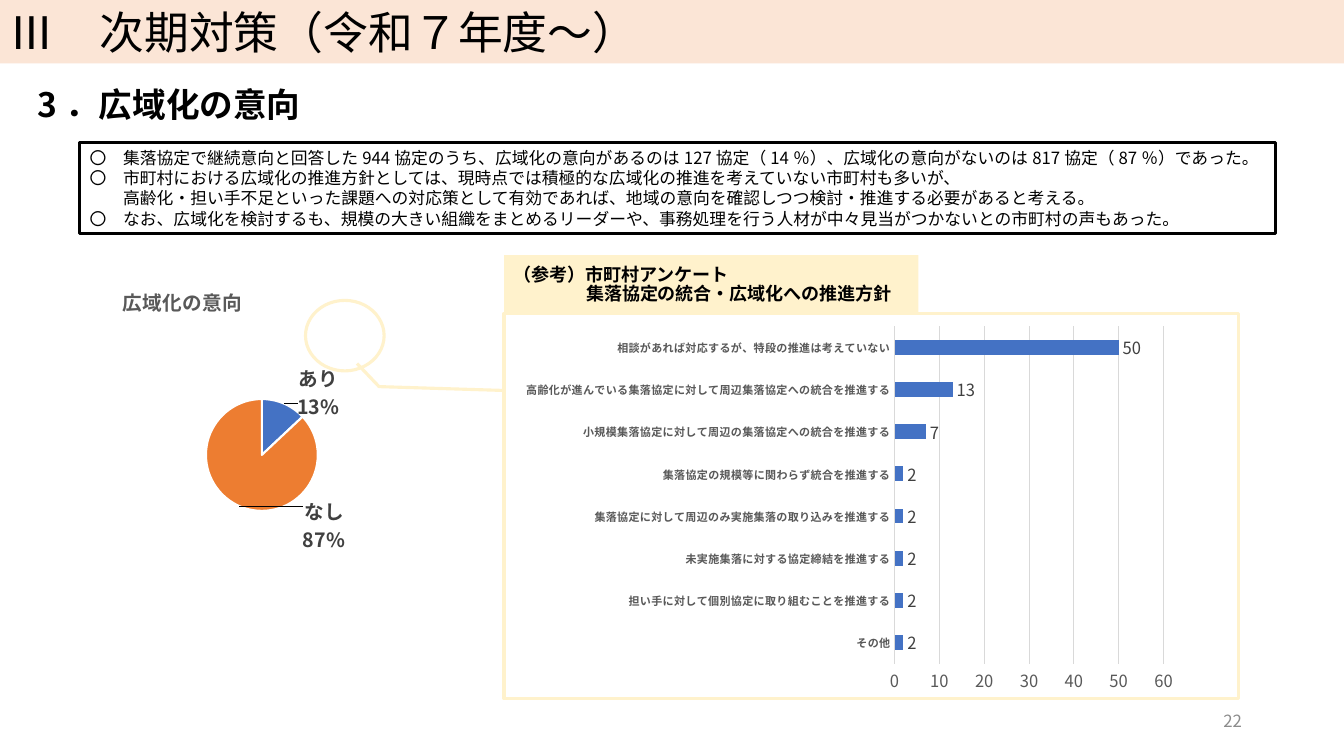
from lxml import etree
from pptx import Presentation
from pptx.chart.data import CategoryChartData
from pptx.dml.color import RGBColor
from pptx.enum.chart import XL_CHART_TYPE, XL_LABEL_POSITION, XL_TICK_MARK
from pptx.enum.shapes import MSO_SHAPE
from pptx.enum.text import MSO_ANCHOR, PP_ALIGN
from pptx.oxml.ns import qn
from pptx.util import Inches, Pt

RECTANGLE, OVAL, CALLOUT = MSO_SHAPE.RECTANGLE, MSO_SHAPE.OVAL, MSO_SHAPE.LINE_CALLOUT_2
PIE, BAR = XL_CHART_TYPE.PIE, XL_CHART_TYPE.BAR_CLUSTERED
OUTSIDE_END, NO_TICK = XL_LABEL_POSITION.OUTSIDE_END, XL_TICK_MARK.NONE
MIDDLE, LEFT, RIGHT = MSO_ANCHOR.MIDDLE, PP_ALIGN.LEFT, PP_ALIGN.RIGHT

FONT = "Noto Sans CJK JP"
BLACK = RGBColor(0x00, 0x00, 0x00)
WHITE = RGBColor(0xFF, 0xFF, 0xFF)
CREAM = RGBColor(0xFF, 0xF2, 0xCC)
PEACH = RGBColor(0xFB, 0xE5, 0xD6)
BLUE = RGBColor(0x44, 0x72, 0xC4)
ORANGE = RGBColor(0xED, 0x7D, 0x31)
LABEL_GRAY = RGBColor(0x40, 0x40, 0x40)
AXIS_GRAY = RGBColor(0x59, 0x59, 0x59)
PAGE_GRAY = RGBColor(0x8C, 0x8C, 0x8C)
GRID_GRAY = RGBColor(0xD9, 0xD9, 0xD9)

SLIDE_WIDTH, SLIDE_HEIGHT = Inches(13.333), Inches(7.5)

SUMMARY = [
    ("〇　集落協定で継続意向と回答した944協定のうち、広域化の意向があるのは127協定（14％）、広域化の意向がないのは817協定（87％）であった。", 0),
    ("〇　市町村における広域化の推進方針としては、現時点では積極的な広域化の推進を考えていない市町村も多いが、", 0),
    ("高齢化・担い手不足といった課題への対応策として有効であれば、地域の意向を確認しつつ検討・推進する必要があると考える。", 2),
    ("〇　なお、広域化を検討するも、規模の大きい組織をまとめるリーダーや、事務処理を行う人材が中々見当がつかないとの市町村の声もあった。", 0),
]
SURVEY_HEADING = [("（参考）市町村アンケート", 0), ("集落協定の統合・広域化への推進方針", 4)]
INTENTIONS = [("あり", 13), ("なし", 87)]
POLICIES = [
    ("その他", 2),
    ("担い手に対して個別協定に取り組むことを推進する", 2),
    ("未実施集落に対する協定締結を推進する", 2),
    ("集落協定に対して周辺のみ実施集落の取り込みを推進する", 2),
    ("集落協定の規模等に関わらず統合を推進する", 2),
    ("小規模集落協定に対して周辺の集落協定への統合を推進する", 7),
    ("高齢化が進んでいる集落協定に対して周辺集落協定への統合を推進する", 13),
    ("相談があれば対応するが、特段の推進は考えていない", 50),
]


def percent_box(left, top, width, height):
    return (int(SLIDE_WIDTH * left / 100), int(SLIDE_HEIGHT * top / 100),
            int(SLIDE_WIDTH * width / 100), int(SLIDE_HEIGHT * height / 100))


def style_font(font, size, color, bold=False):
    font.name, font.size, font.bold = FONT, Pt(size), bold
    font.color.rgb = color


def add_east_asian_font(element):
    for latin in element.iter(qn("a:latin")):
        east_asian = etree.Element(qn("a:ea"))
        east_asian.set("typeface", FONT)
        latin.addnext(east_asian)


def write_text(box, lines, size, color=BLACK, bold=False, align=LEFT, spacing=1.0):
    frame = box.text_frame
    frame.word_wrap = True
    frame.vertical_anchor = MIDDLE
    for index, (text, indent) in enumerate(lines):
        para = frame.add_paragraph() if index else frame.paragraphs[0]
        para.alignment, para.line_spacing = align, spacing
        if indent:
            para._p.get_or_add_pPr().set("marL", str(Pt(size * indent)))
        span = para.add_run()
        span.text = text
        style_font(span.font, size, color, bold)


def add_panel(page, kind, area, fill=None, line=None):
    shape = page.shapes.add_shape(kind, *percent_box(*area))
    shape.shadow.inherit = False
    if fill is None:
        shape.fill.background()
    else:
        shape.fill.solid()
        shape.fill.fore_color.rgb = fill
    if line is None:
        shape.line.fill.background()
    else:
        shape.line.color.rgb = line
        shape.line.width = Pt(2.25)
    return shape


def make_layout(x, y, width=None, height=None):
    layout = etree.Element(qn("c:layout"))
    manual = etree.SubElement(layout, qn("c:manualLayout"))
    settings = [("x", x), ("y", y)]
    if width is not None:
        settings = [("layoutTarget", "inner"), ("xMode", "edge"), ("yMode", "edge"),
                    *settings, ("w", width), ("h", height)]
    for name, value in settings:
        etree.SubElement(manual, qn(f"c:{name}")).set("val", str(value))
    return layout


def place_plot(chart, *area):
    plot_area = chart.element.find(".//" + qn("c:plotArea"))
    for old in plot_area.findall(qn("c:layout")):
        plot_area.remove(old)
    plot_area.insert(0, make_layout(*area))


def add_chart(page, kind, area, name, rows):
    data = CategoryChartData()
    data.categories = [label for label, _ in rows]
    data.add_series(name, [value for _, value in rows])
    chart = page.shapes.add_chart(kind, *percent_box(*area), data).chart
    chart.has_legend = False
    chart.has_title = False
    style_font(chart.font, 10, BLACK)
    return chart


def show_category_and_percent(series):
    for tag in ("c:dLbls", "c:dLbl"):
        for label in series._element.iter(qn(tag)):
            for name, value in (("showVal", "0"), ("showCatName", "1"), ("showPercent", "1")):
                label.find(qn(f"c:{name}")).set("val", value)
            separator = etree.Element(qn("c:separator"))
            separator.text = "\n"
            label.find(qn("c:showBubbleSize")).addnext(separator)


def add_intention_pie(page):
    chart = add_chart(page, PIE, (5.93, 36.4, 26.85, 40.67), "広域化の意向", INTENTIONS)
    chart.has_title = True
    span = chart.chart_title.text_frame.paragraphs[0].add_run()
    span.text = "広域化の意向"
    style_font(span.font, 14, AXIS_GRAY, True)
    heading = chart.element.find(".//" + qn("c:title"))
    for old in heading.findall(qn("c:layout")):
        heading.remove(old)
    position = make_layout(0.11, 0.02)
    for mode in ("yMode", "xMode"):
        node = etree.Element(qn(f"c:{mode}"))
        node.set("val", "edge")
        position[0].insert(0, node)
    heading.find(qn("c:tx")).addnext(position)
    place_plot(chart, 0.35, 0.4, 0.31, 0.37)
    plot = chart.plots[0]
    plot.vary_by_categories = True
    series = plot.series[0]
    style_font(series.data_labels.font, 14, LABEL_GRAY, True)
    for index, color in enumerate((BLUE, ORANGE)):
        point = series.points[index]
        point.format.fill.solid()
        point.format.fill.fore_color.rgb = color
        point.format.line.color.rgb = WHITE
        point.format.line.width = Pt(1.5)
        style_font(point.data_label.font, 14, LABEL_GRAY, True)
        point.data_label.position = OUTSIDE_END
    show_category_and_percent(series)
    offsets = ((0.03, 0.07), (0.3, -0.05))
    for label, offset in zip(series._element.iter(qn("c:dLbl")), offsets):
        label.insert(1, make_layout(*offset))
    add_east_asian_font(chart.element)


def add_policy_bars(page):
    chart = add_chart(page, BAR, (39.15, 42.67, 52.05, 49.6), "Series 1", POLICIES)
    place_plot(chart, 0.52, 0.01, 0.39, 0.9)
    plot = chart.plots[0]
    plot.gap_width, plot.vary_by_categories = 182, False
    series = plot.series[0]
    series.format.fill.solid()
    series.format.fill.fore_color.rgb = BLUE
    labels = series.data_labels
    labels.show_value, labels.position = True, OUTSIDE_END
    style_font(labels.font, 12, LABEL_GRAY)
    names, scale = chart.category_axis, chart.value_axis
    for axis, size, bold in ((names, 8, True), (scale, 12, False)):
        axis.major_tick_mark = axis.minor_tick_mark = NO_TICK
        style_font(axis.tick_labels.font, size, AXIS_GRAY, bold)
    scale.minimum_scale, scale.maximum_scale, scale.major_unit = 0, 60, 10
    scale.format.line.fill.background()
    for line in (names.format.line, scale.major_gridlines.format.line):
        line.color.rgb = GRID_GRAY
        line.width = Pt(0.75)
    add_east_asian_font(chart.element)


def main():
    deck = Presentation()
    deck.slide_width, deck.slide_height = SLIDE_WIDTH, SLIDE_HEIGHT
    page = deck.slides.add_slide(deck.slide_layouts[5])
    title = page.shapes.title
    title.left, title.top, title.width, title.height = percent_box(2.03, 10.93, 69.53, 6.4)
    write_text(title, [("3．広域化の意向", 0)], 24, bold=True, spacing=0.9)

    callout = add_panel(page, CALLOUT, (37.5, 41.47, 54.68, 50.93), line=CREAM)
    for index, share in enumerate((0.2, 0, 0.19, -0.17, 0.13, -0.2)):
        callout.adjustments[index] = share
    summary = add_panel(page, RECTANGLE, (5.93, 18.8, 88.95, 12.13), line=BLACK)
    write_text(summary, SUMMARY, 12, spacing=Pt(14.5))
    add_intention_pie(page)
    banner = add_panel(page, RECTANGLE, (0, 0, 100, 8.4), fill=PEACH)
    write_text(banner, [("Ⅲ　次期対策（令和７年度～）", 0)], 32, spacing=Pt(38.5))
    number = page.shapes.add_textbox(*percent_box(70.65, 92.67, 22.5, 5.33))
    write_text(number, [("22", 0)], 12, PAGE_GRAY, align=RIGHT)
    survey = add_panel(page, RECTANGLE, (37.5, 33.73, 30.83, 7.87), fill=CREAM)
    write_text(survey, SURVEY_HEADING, 12.9, bold=True, spacing=Pt(14))
    add_policy_bars(page)
    add_panel(page, OVAL, (22.73, 39.73, 5.85, 9.33), line=CREAM)
    add_east_asian_font(page.shapes.element)
    deck.save("out.pptx")


if __name__ == "__main__":
    main()
